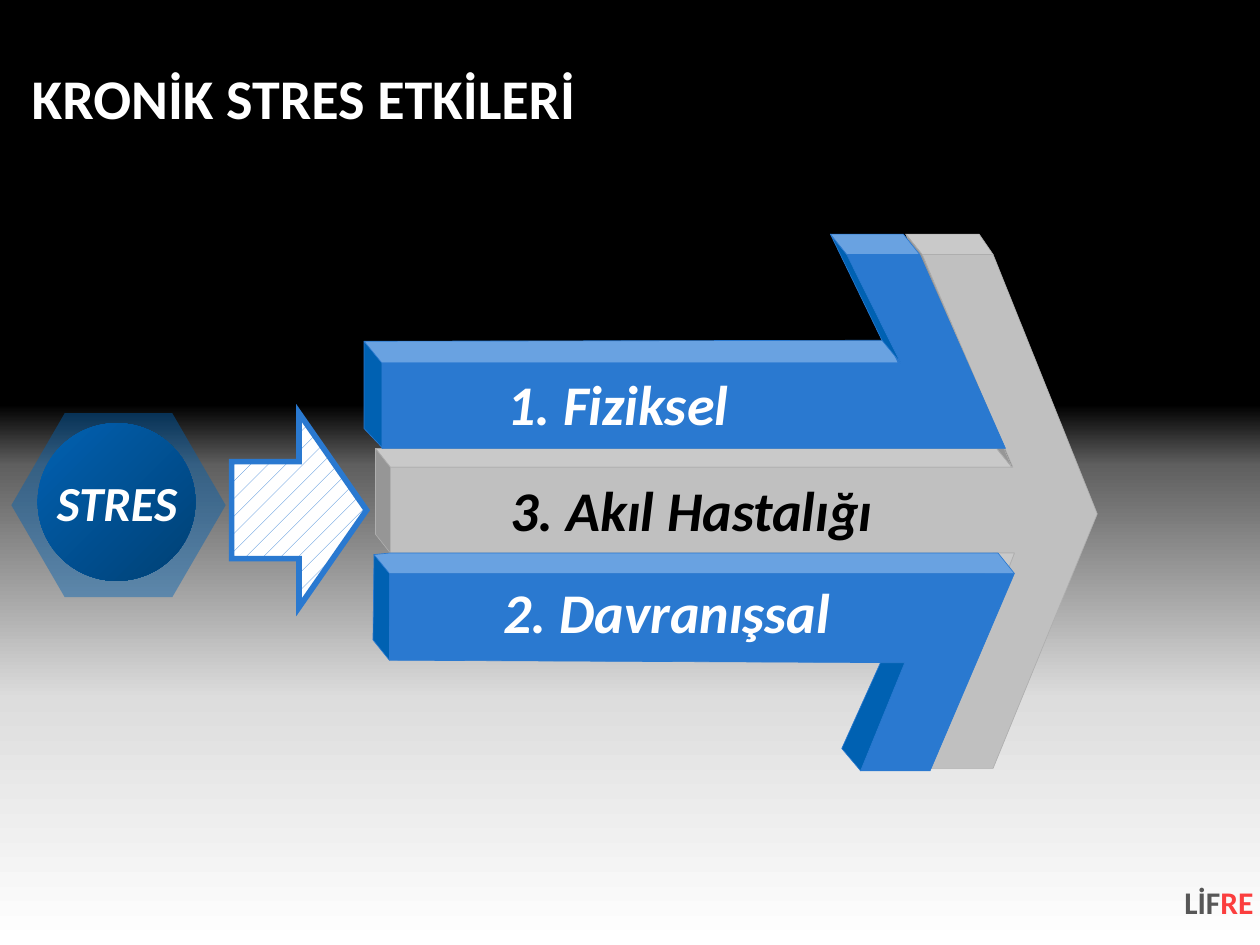
from lxml import etree
from pptx import Presentation
from pptx.dml.color import RGBColor
from pptx.enum.dml import MSO_PATTERN
from pptx.enum.shapes import MSO_SHAPE
from pptx.enum.text import MSO_ANCHOR, PP_ALIGN
from pptx.oxml.ns import qn
from pptx.util import Cm, Pt

RECTANGLE, HEXAGON = MSO_SHAPE.RECTANGLE, MSO_SHAPE.HEXAGON
ELLIPSE, RIGHT_ARROW = MSO_SHAPE.OVAL, MSO_SHAPE.RIGHT_ARROW
DOTTED = MSO_PATTERN.PERCENT_5
TOP, MIDDLE = MSO_ANCHOR.TOP, MSO_ANCHOR.MIDDLE
LEFT, CENTER, RIGHT = PP_ALIGN.LEFT, PP_ALIGN.CENTER, PP_ALIGN.RIGHT

BLACK, WHITE = RGBColor(0, 0, 0), RGBColor(255, 255, 255)
DARK_GREY, PALE_GREY = RGBColor(0x5F, 0x5F, 0x5F), RGBColor(0xDD, 0xDD, 0xDD)
BLUE, LIGHT_BLUE = RGBColor(0x2A, 0x79, 0xD0), RGBColor(0x69, 0xA2, 0xE1)
SIDE_BLUE, DISC_BLUE = RGBColor(0, 0x61, 0xB2), RGBColor(0x01, 0x61, 0xB2)
NAVY = RGBColor(0, 0x40, 0x74)
GREY, LIGHT_GREY = RGBColor(0xC0, 0xC0, 0xC0), RGBColor(0xC9, 0xC9, 0xC9)
SIDE_GREY, EDGE_GREY = RGBColor(0x96, 0x96, 0x96), RGBColor(0xAE, 0xAE, 0xAE)
FOOTER_GREY, FOOTER_RED = RGBColor(0x57, 0x57, 0x57), RGBColor(0xFB, 0x3E, 0x3E)

PAGE_WIDTH, PAGE_HEIGHT = 25.4, 19.05
FONT = "Calibri"
DOWN, DIAGONAL = 270, 315

BANDS = [
    (0, 8.43, BLACK, BLACK),
    (9.37, 4.72, DARK_GREY, PALE_GREY),
    (8.15, 1.24, BLACK, DARK_GREY),
    (14.05, 5, PALE_GREY, WHITE),
]

MIDDLE_ARROW = [
    (LIGHT_GREY, [(7.57, 9.04), (7.87, 9.42), (20.4, 9.42), (20.09, 9.04)]),
    (SIDE_GREY, [(7.87, 9.42), (7.87, 11.15), (7.57, 10.77), (7.57, 9.04)]),
    (GREY, [(7.87, 11.15), (20.45, 11.15), (18.77, 15.49), (20.02, 15.49), (22.12, 10.36),
            (20.02, 5.13), (18.59, 5.13), (20.42, 9.42), (7.87, 9.42)]),
    (LIGHT_GREY, [(18.59, 5.13), (18.26, 4.72), (19.74, 4.72), (20.02, 5.13)]),
    (LIGHT_GREY, [(18.75, 15.49), (18.44, 15.09), (20.02, 11.15), (20.45, 11.15)]),
    (SIDE_GREY, [(20.09, 9.04), (18.26, 4.72), (18.59, 5.13), (20.4, 9.42)]),
]
UPPER_ARROW = [
    (SIDE_BLUE, [(7.72, 9.04), (7.72, 7.32), (7.34, 6.88), (7.34, 8.64)]),
    (LIGHT_BLUE, [(7.7, 7.32), (18.16, 7.32), (17.81, 6.86), (7.34, 6.88)]),
    (BLUE, [(7.7, 9.04), (20.27, 9.04), (18.54, 5.13), (17.07, 5.13), (18.11, 7.32), (7.7, 7.32)]),
    (SIDE_BLUE, [(17.78, 6.86), (16.74, 4.72), (17.07, 5.13), (18.16, 7.32)]),
    (LIGHT_BLUE, [(16.74, 4.72), (18.21, 4.72), (18.54, 5.13), (17.07, 5.13)]),
]
LOWER_ARROW = [
    (SIDE_BLUE, [(7.54, 11.18), (7.87, 11.56), (7.85, 13.31), (7.52, 12.9)]),
    (BLUE, [(7.85, 11.56), (20.45, 11.56), (18.75, 15.54), (17.35, 15.54), (18.24, 13.36), (7.85, 13.31)]),
    (LIGHT_BLUE, [(7.54, 11.18), (7.85, 11.15), (20.12, 11.15), (20.45, 11.56), (7.85, 11.56)]),
    (SIDE_BLUE, [(17.35, 15.54), (16.97, 15.09), (17.75, 13.36), (18.24, 13.36)]),
]
ARROWS = [(MIDDLE_ARROW, EDGE_GREY), (UPPER_ARROW, BLUE), (LOWER_ARROW, BLUE)]

TEXTS = [
    ((0.64, 1.14, 24.49, 1.8), [("KRONİK STRES ETKİLERİ", WHITE)], 32, False, LEFT, MIDDLE, 0.9),
    ((10.29, 9.58, 7.37, 1.37), [("3. Akıl Hastalığı", BLACK)], 32, True, LEFT, TOP, 1.0),
    ((0.86, 9.53, 3, 1.19), [("STRES", WHITE)], 28, True, CENTER, MIDDLE, 1.0),
    ((8.99, 7.44, 7.19, 1.37), [("1. Fiziksel ", WHITE)], 32, True, CENTER, MIDDLE, 1.0),
    ((9.98, 11.63, 7.19, 1.37), [("2. Davranışsal ", WHITE)], 32, True, CENTER, MIDDLE, 1.0),
    ((23.44, 17.81, 1.83, 1.2), [("LİF", FOOTER_GREY), ("RE", FOOTER_RED)], 18, False, RIGHT, TOP, 1.0),
]


def set_values(target, values):
    for name, value in values.items():
        setattr(target, name, value)


def add_plain_shape(page, kind, place):
    shape = page.shapes.add_shape(kind, *map(Cm, place))
    shape.shadow.inherit = False
    shape.line.fill.background()
    return shape


def fill_solid(shape, color):
    shape.fill.solid()
    shape.fill.fore_color.rgb = color


def fill_gradient(shape, colors, angle):
    shape.fill.gradient()
    shape.fill.gradient_angle = angle
    for stop, position, color in zip(shape.fill.gradient_stops, (0, 1), colors):
        stop.position = position
        stop.color.rgb = color


def add_band(page, top, height, first, last):
    band = add_plain_shape(page, RECTANGLE, (0, top, PAGE_WIDTH, height))
    if first == last:
        fill_solid(band, first)
    else:
        fill_gradient(band, (first, last), DOWN)


def add_face(page, color, corners, edge):
    start, *others = [(Cm(x), Cm(y)) for x, y in corners]
    builder = page.shapes.build_freeform(*start)
    builder.add_line_segments(others, close=True)
    face = builder.convert_to_shape()
    face.shadow.inherit = False
    fill_solid(face, color)
    face.line.color.rgb = edge
    face.line.width = Pt(0.38)


def add_source(page):
    pointer = add_plain_shape(page, RIGHT_ARROW, (4.67, 8.33, 2.72, 3.91))
    pointer.fill.patterned()
    pointer.fill.pattern = DOTTED
    pointer.fill.fore_color.rgb = BLUE
    pointer.fill.back_color.rgb = WHITE
    pointer.line.color.rgb = BLUE
    pointer.line.width = Pt(3.25)
    etree.SubElement(pointer.line.fill._xPr, qn("a:miter"), lim="800000")

    hexagon = add_plain_shape(page, HEXAGON, (0.23, 8.33, 4.32, 3.71))
    hexagon.adjustments[0] = 0.29
    fill_solid(hexagon, DISC_BLUE)
    color = hexagon.fill._xPr.find(qn("a:solidFill"))[0]
    etree.SubElement(color, qn("a:alpha"), val="44000")

    disc = add_plain_shape(page, ELLIPSE, (0.76, 8.53, 3.18, 3.18))
    fill_gradient(disc, (DISC_BLUE, NAVY), DIAGONAL)


def add_text(page, place, spans, size, italic, align, anchor, spacing):
    frame = page.shapes.add_textbox(*map(Cm, place)).text_frame
    set_values(frame, {"word_wrap": True, "vertical_anchor": anchor, "margin_left": 0,
                       "margin_right": 0, "margin_top": 0, "margin_bottom": 0})
    para = frame.paragraphs[0]
    set_values(para, {"alignment": align, "line_spacing": spacing})
    for text, color in spans:
        span = para.add_run()
        span.text = text
        set_values(span.font, {"name": FONT, "size": Pt(size), "bold": True, "italic": italic})
        span.font.color.rgb = color


def main():
    deck = Presentation()
    set_values(deck, {"slide_width": Cm(PAGE_WIDTH), "slide_height": Cm(PAGE_HEIGHT)})
    page = deck.slides.add_slide(deck.slide_layouts[6])
    for band in BANDS:
        add_band(page, *band)
    add_source(page)
    for faces, edge in ARROWS:
        for color, corners in faces:
            add_face(page, color, corners, edge)
    for text in TEXTS:
        add_text(page, *text)
    deck.save("out.pptx")


if __name__ == "__main__":
    main()
